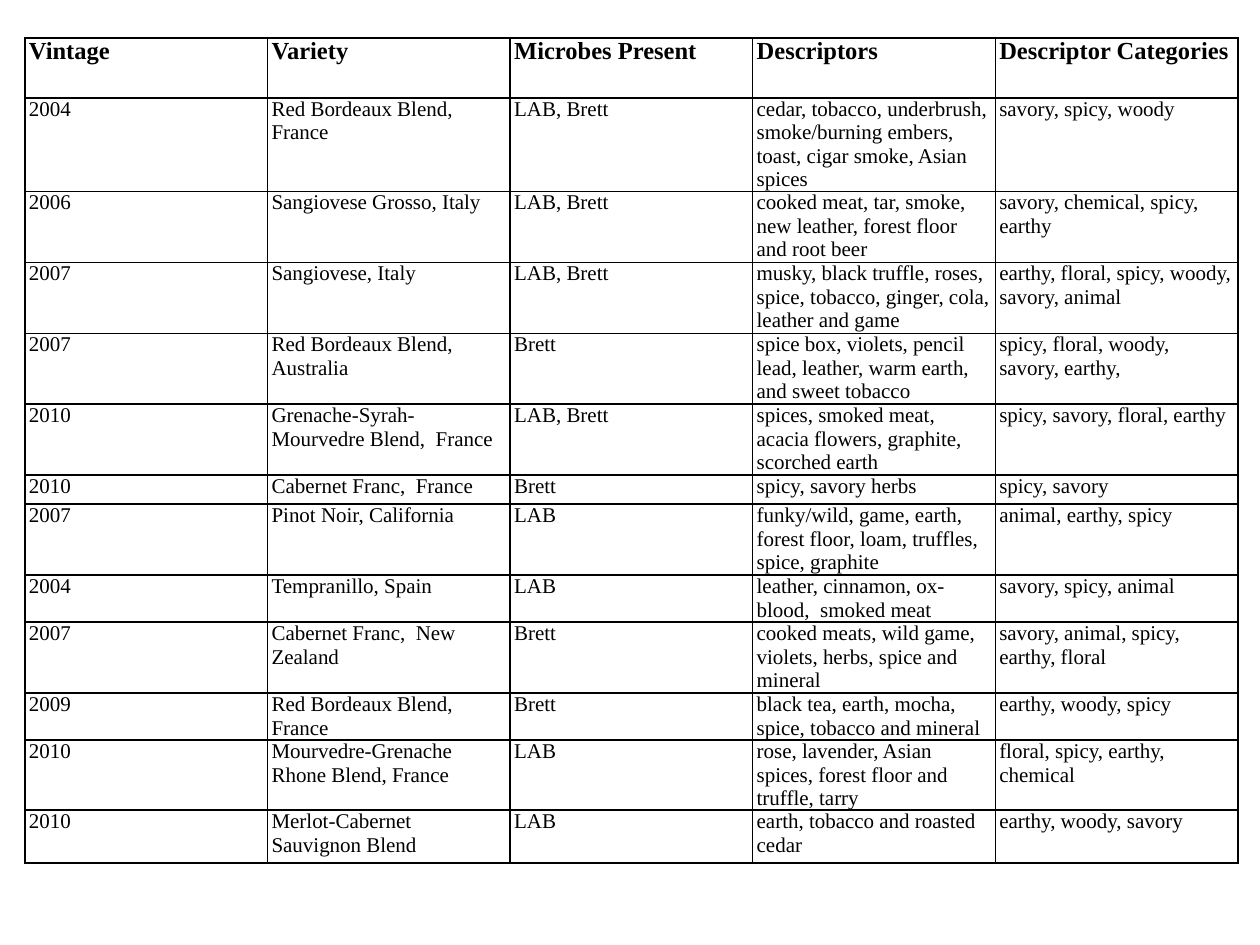
from typing import NamedTuple

import pptx
import pptx.dml.color
import pptx.oxml
import pptx.oxml.ns
import pptx.util

PIXELS_PER_INCH = 126
BLACK = pptx.dml.color.RGBColor(0, 0, 0)
WHITE = pptx.dml.color.RGBColor(255, 255, 255)
FONT_NAME = "Times New Roman"

TABLE_LEFT, TABLE_TOP = 25, 38
TABLE_WIDTH, TABLE_HEIGHT = 1213, 872
SIDE_MARGIN = 4
HEADER_HEIGHT = 60
ONE_LINE, TWO_LINES, THREE_LINES, LAST_ROW = 29, 47, 71, 53


class Wine(NamedTuple):
    height: int
    vintage: str
    variety: str
    microbes: str
    descriptors: str
    categories: str


HEADINGS = ("Vintage", "Variety", "Microbes Present", "Descriptors", "Descriptor Categories")

WINES = [
    Wine(THREE_LINES, "2004", "Red Bordeaux Blend, France", "LAB, Brett",
         "cedar, tobacco, underbrush, smoke/burning embers, toast, cigar smoke, Asian spices",
         "savory, spicy, woody"),
    Wine(THREE_LINES, "2006", "Sangiovese Grosso, Italy", "LAB, Brett",
         "cooked meat, tar, smoke, new leather, forest floor and root beer",
         "savory, chemical, spicy, earthy"),
    Wine(THREE_LINES, "2007", "Sangiovese, Italy", "LAB, Brett",
         "musky, black truffle, roses, spice, tobacco, ginger, cola, leather and game",
         "earthy, floral, spicy, woody, savory, animal"),
    Wine(THREE_LINES, "2007", "Red Bordeaux Blend, Australia", "Brett",
         "spice box, violets, pencil lead, leather, warm earth, and sweet tobacco",
         "spicy, floral, woody, savory, earthy,"),
    Wine(THREE_LINES, "2010", "Grenache-Syrah-Mourvedre Blend,  France", "LAB, Brett",
         "spices, smoked meat, acacia flowers, graphite, scorched earth",
         "spicy, savory, floral, earthy"),
    Wine(ONE_LINE, "2010", "Cabernet Franc,  France", "Brett",
         "spicy, savory herbs", "spicy, savory"),
    Wine(THREE_LINES, "2007", "Pinot Noir, California", "LAB",
         "funky/wild, game, earth, forest floor, loam, truffles, spice, graphite",
         "animal, earthy, spicy"),
    Wine(TWO_LINES, "2004", "Tempranillo, Spain", "LAB",
         "leather, cinnamon, ox-blood,  smoked meat", "savory, spicy, animal"),
    Wine(THREE_LINES, "2007", "Cabernet Franc,  New Zealand", "Brett",
         "cooked meats, wild game, violets, herbs, spice and mineral",
         "savory, animal, spicy, earthy, floral"),
    Wine(TWO_LINES, "2009", "Red Bordeaux Blend, France", "Brett",
         "black tea, earth, mocha, spice, tobacco and mineral", "earthy, woody, spicy"),
    Wine(TWO_LINES, "2010", "Mourvedre-Grenache Rhone Blend, France", "LAB",
         "rose, lavender, Asian spices, forest floor and truffle, tarry",
         "floral, spicy, earthy, chemical"),
    Wine(LAST_ROW, "2010", "Merlot-Cabernet Sauvignon Blend", "LAB",
         "earth, tobacco and roasted cedar", "earthy, woody, savory"),
]


def px(length: int) -> pptx.util.Emu:
    return pptx.util.Emu(round(length * 914400 / PIXELS_PER_INCH))


def add_borders(cell) -> None:
    """Draw a 1 pt line on all four sides; lines must precede the fill in the XML."""
    properties = cell._tc.get_or_add_tcPr()
    for position, side in enumerate(("lnL", "lnR", "lnT", "lnB")):
        line = pptx.oxml.parse_xml(
            f'<a:{side} {pptx.oxml.ns.nsdecls("a")} w="{pptx.util.Pt(1)}">'
            f'<a:solidFill><a:srgbClr val="{BLACK}"/></a:solidFill></a:{side}>'
        )
        properties.insert(position, line)


def write_cell(cell, text: str, size: int, bold: bool) -> None:
    cell.margin_left = cell.margin_right = px(SIDE_MARGIN)
    cell.margin_top = cell.margin_bottom = 0
    cell.fill.solid()
    cell.fill.fore_color.rgb = WHITE
    add_borders(cell)
    cell.text = text
    font = cell.text_frame.paragraphs[0].font
    font.name = FONT_NAME
    font.size = pptx.util.Pt(size)
    font.bold = bold
    font.color.rgb = BLACK


def write_row(table, index: int, height: int, texts: tuple[str, ...],
              size: int = 12, bold: bool = False) -> None:
    table.rows[index].height = px(height)
    for cell, text in zip(table.rows[index].cells, texts):
        write_cell(cell, text, size, bold)


def add_wine_table(slide) -> None:
    frame = slide.shapes.add_table(
        len(WINES) + 1, len(HEADINGS),
        px(TABLE_LEFT), px(TABLE_TOP), px(TABLE_WIDTH), px(TABLE_HEIGHT),
    )
    table = frame.table
    table.first_row = table.horz_banding = False
    write_row(table, 0, HEADER_HEIGHT, HEADINGS, size=14, bold=True)
    for index, wine in enumerate(WINES, start=1):
        write_row(table, index, wine.height, wine[1:])
    frame.height = px(TABLE_HEIGHT)


def main() -> None:
    deck = pptx.Presentation()
    deck.slide_width = pptx.util.Inches(10)
    deck.slide_height = pptx.util.Inches(7.5)
    add_wine_table(deck.slides.add_slide(deck.slide_layouts[6]))
    deck.save("out.pptx")


if __name__ == "__main__":
    main()
